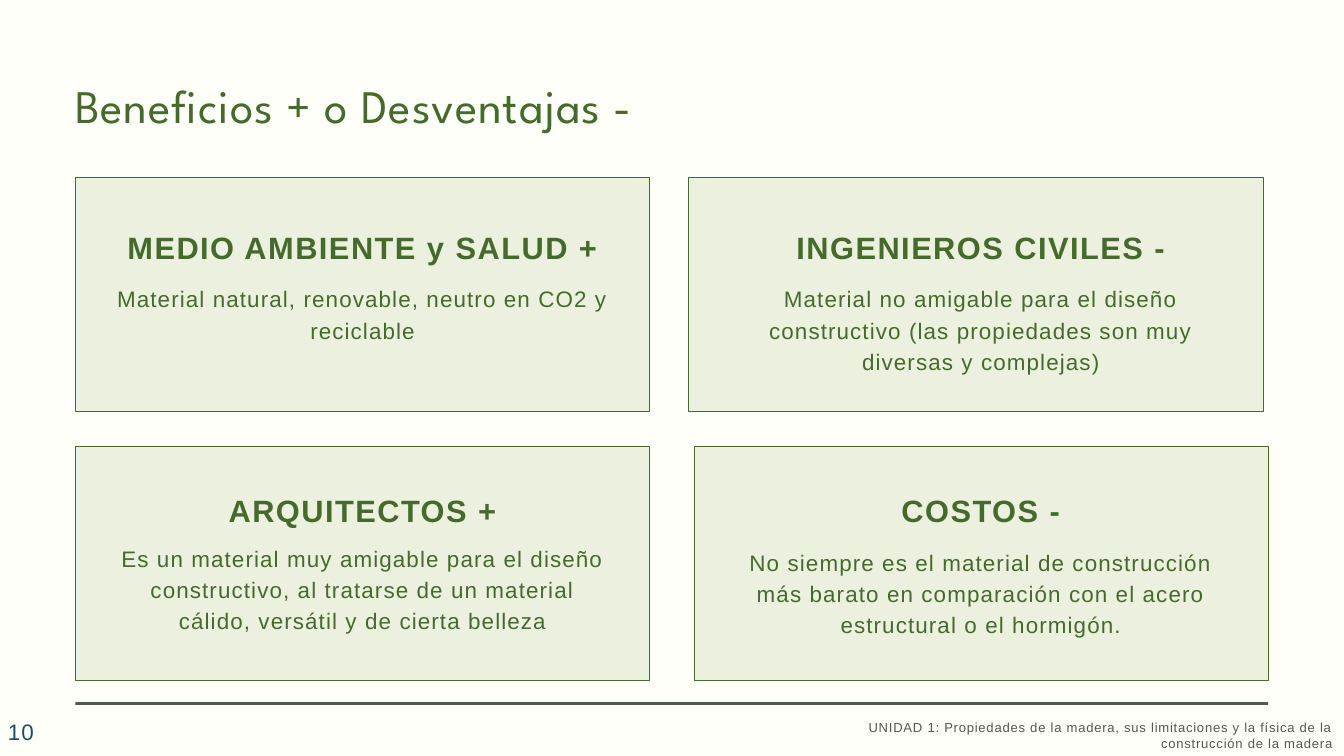
from dataclasses import dataclass

from pptx import Presentation
from pptx import util as u
from pptx.dml.color import RGBColor
from pptx.enum import shapes, text

COLORS = {
    "background": "FEFFF8",
    "green": "456A2C",
    "card": "EBF1DE",
    "gray": "52584D",
    "blue": "1E4D65",
}
CARD_WIDTH, CARD_HEIGHT = 8.55, 3.48
TEXT_WIDTH = 7.39


@dataclass(frozen=True)
class Card:
    heading: str
    body: str
    left: float
    top: float
    text_left: float
    heading_top: float
    body_top: float
    body_height: float = 1.4


CARDS = [
    Card("ARQUITECTOS +",
         "Es un material muy amigable para el diseño constructivo, al tratarse "
         "de un material cálido, versátil y de cierta belleza",
         1.12, 6.64, 1.7, 7.3, 8.04),
    Card("MEDIO AMBIENTE y SALUD +",
         "Material natural, renovable, neutro en CO2 y reciclable",
         1.12, 2.64, 1.7, 3.38, 4.18, 0.95),
    Card("INGENIEROS CIVILES -",
         "Material no amigable para el diseño constructivo (las propiedades "
         "son muy diversas y complejas)",
         10.25, 2.64, 10.9, 3.38, 4.18),
    Card("COSTOS -",
         "No siempre es el material de construcción más barato en comparación "
         "con el acero estructural o el hormigón.",
         10.33, 6.64, 10.9, 7.3, 8.1),
]


def color(name: str) -> RGBColor:
    return RGBColor.from_string(COLORS[name])


def inches(*lengths: float) -> list[u.Length]:
    return [u.Inches(length) for length in lengths]


def add_text(parent, content: str, left: float, top: float, width: float,
             height: float, *, size: float, spacing: float,
             tint: str = "green", font: str = "Arial", bold: bool = False,
             align=text.PP_ALIGN.LEFT, anchor=text.MSO_ANCHOR.TOP,
             leading: float | None = None, inset: tuple = (0, 0)) -> None:
    box = parent.shapes.add_textbox(*inches(left, top, width, height))
    frame = box.text_frame
    frame.word_wrap = True
    frame.vertical_anchor = anchor
    frame.margin_left = frame.margin_right = u.Inches(inset[0])
    frame.margin_top = frame.margin_bottom = u.Inches(inset[1])
    para = frame.paragraphs[0]
    para.alignment = align
    if leading:
        para.line_spacing = u.Pt(leading)
    span = para.add_run()
    span.text = content
    span.font.name = font
    span.font.size = u.Pt(size)
    span.font.bold = bold
    span.font.color.rgb = color(tint)
    span._r.get_or_add_rPr().set("spc", str(round(spacing * 100)))


def add_rectangle(page, left: float, top: float, width: float, height: float,
                  fill: str, line: str | None = None) -> None:
    box = page.shapes.add_shape(shapes.MSO_SHAPE.RECTANGLE,
                                *inches(left, top, width, height))
    box.shadow.inherit = False
    box.fill.solid()
    box.fill.fore_color.rgb = color(fill)
    if line:
        box.line.color.rgb = color(line)
        box.line.width = u.Pt(0.75)
    else:
        box.line.fill.background()


def add_card(page, card: Card) -> None:
    add_rectangle(page, card.left, card.top, CARD_WIDTH, CARD_HEIGHT,
                  "card", "green")
    group = page.shapes.add_group_shape()
    add_text(group, card.heading, card.text_left, card.heading_top, TEXT_WIDTH,
             0.55, size=33, spacing=1.6, bold=True, leading=41.2,
             align=text.PP_ALIGN.CENTER)
    add_text(group, card.body, card.text_left, card.body_top, TEXT_WIDTH,
             card.body_height, size=24, spacing=1.2, leading=33.6,
             align=text.PP_ALIGN.CENTER)


def main() -> None:
    deck = Presentation()
    deck.slide_width, deck.slide_height = inches(20, 11.25)
    page = deck.slides.add_slide(deck.slide_layouts[6])
    page.background.fill.solid()
    page.background.fill.fore_color.rgb = color("background")

    add_text(page, "Beneficios + o Desventajas -", 1.12, 1.05, 11.12, 0.94,
             size=50, spacing=1, font="League Spartan", leading=66.8)
    for card in CARDS:
        add_card(page, card)
    add_rectangle(page, 1.12, 10.45, 17.75, 0.04, "gray")
    add_text(page, "10", 0.02, 10.69, 2.33, 0.4, size=24, spacing=1.2,
             tint="blue", anchor=text.MSO_ANCHOR.MIDDLE, inset=(0.1, 0.05))
    add_text(page, "UNIDAD 1: Propiedades de la madera, sus limitaciones y la "
             "física de la construcción de la madera", 12.58, 10.71, 7.25, 0.47,
             size=14, spacing=0.8, tint="gray", align=text.PP_ALIGN.RIGHT)
    deck.save("out.pptx")


if __name__ == "__main__":
    main()
